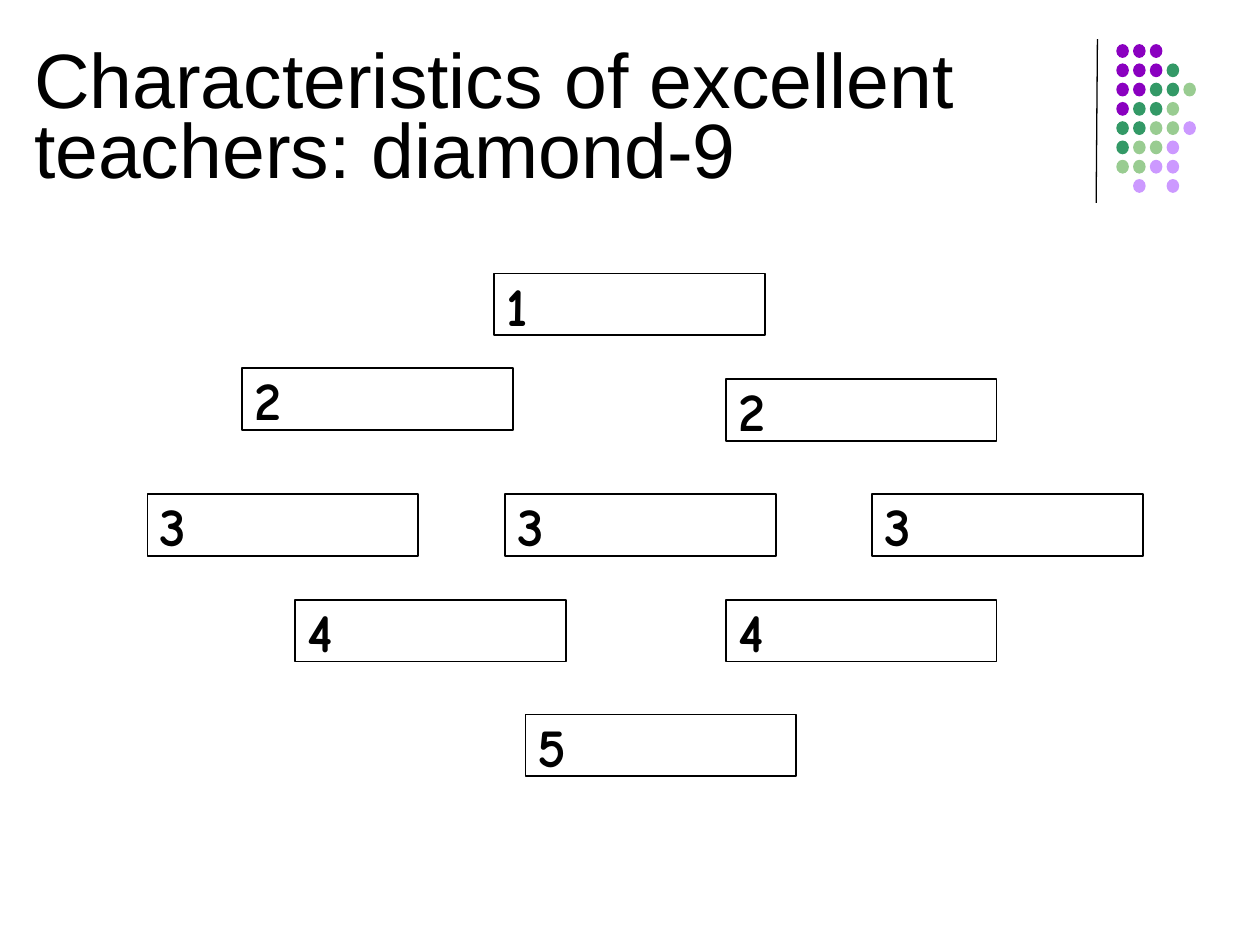
from pptx import Presentation
from pptx.dml.color import RGBColor
from pptx.enum.shapes import MSO_CONNECTOR as CONN, MSO_SHAPE as SHAPE
from pptx.enum.text import MSO_ANCHOR as ANCHOR, MSO_AUTO_SIZE as AUTO, PP_ALIGN as ALIGN
from pptx.oxml.ns import qn
from pptx.util import Inches, Pt
from lxml.etree import SubElement

# Content
TITLE = "Characteristics of excellent teachers: diamond-9"
RANKS = [  # label, top, left edges
    ("1", 2.17, [3.92]),
    ("2", 2.92, [1.92]),
    ("2", 3.01, [5.76]),
    ("3", 3.92, [1.17, 4.01, 6.92]),
    ("4", 4.76, [2.34, 5.76]),
    ("5", 5.67, [4.17]),
]
DOTS = ["PPP", "PPPG", "PPGGL", "PGGL", "GGLLV", "GLLV", "LLVV", " V V"]

# Theme
THEME = {
    "ink": RGBColor.from_string("000000"),
    "dots": {key: RGBColor.from_string(value) for key, value in
             {"P": "8A00C0", "G": "339966", "L": "99CC91", "V": "CC99FF"}.items()},
    "title": {"name": "Arial", "size": Pt(44), "bold": False},
    "rank": {"name": "Comic Neue", "size": Pt(31), "bold": True},
}
BOX_W, BOX_H = 2.15, 0.49
DOT_LEFT, DOT_TOP, DOT_DX, DOT_DY, DOT_W, DOT_H = 8.86, 0.35, 0.133, 0.153, 0.1, 0.11


def place(left, top, width, height):
    return [Inches(v) for v in (left, top, width, height)]


def write(sp, text, style):
    tf = sp.text_frame
    for name, value in {"word_wrap": True, "auto_size": AUTO.NONE,
                        "vertical_anchor": ANCHOR.MIDDLE}.items():
        setattr(tf, name, value)
    p = tf.paragraphs[0]
    p.alignment = ALIGN.LEFT
    r = p.add_run()
    r.text = text
    for name, value in style.items():
        setattr(r.font, name, value)
    r.font.color.rgb = THEME["ink"]
    return p


prs = Presentation()
prs.slide_width, prs.slide_height = Inches(10), Inches(7.5)
slide = prs.slides.add_slide(prs.slide_layouts[5])
shapes = slide.shapes

# Divider beside the dots
divider = shapes.add_connector(CONN.STRAIGHT, *place(8.71, 0.31, 8.7, 1.61))
divider.line.color.rgb = THEME["ink"]
divider.line.width = Pt(0.75)
SubElement(divider._element.spPr, qn("a:effectLst"))

# Dot pattern, one group
dots = shapes.add_group_shape()
for row, line in enumerate(DOTS):
    for col, key in enumerate(line):
        if key == " ":
            continue
        dot = dots.shapes.add_shape(SHAPE.OVAL, *place(
            DOT_LEFT + col * DOT_DX, DOT_TOP + row * DOT_DY, DOT_W, DOT_H))
        dot.shadow.inherit = False
        dot.fill.solid()
        dot.fill.fore_color.rgb = THEME["dots"][key]
        dot.line.fill.background()

# Title
title = shapes.title
title.left, title.top, title.width, title.height = place(0.17, 0.38, 9.83, 1.19)
write(title, TITLE, THEME["title"]).line_spacing = 0.75

# Ranking boxes
for label, top, lefts in RANKS:
    for left in lefts:
        box = shapes.add_shape(SHAPE.RECTANGLE, *place(left, top, BOX_W, BOX_H))
        box.shadow.inherit = False
        box.fill.background()
        box.line.color.rgb = THEME["ink"]
        box.line.width = Pt(1)
        write(box, label, THEME["rank"])

prs.save("out.pptx")
